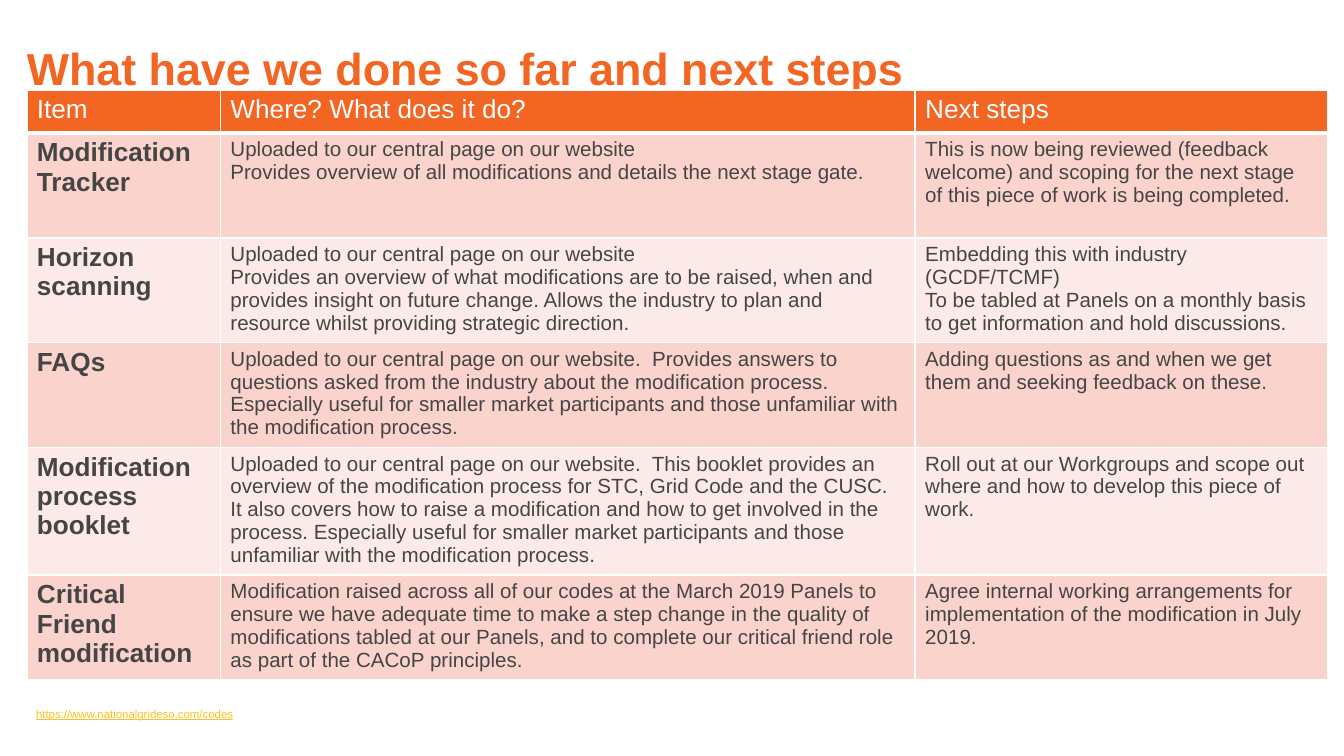
from lxml.etree import SubElement
from pptx import Presentation
from pptx.dml.color import RGBColor
from pptx.enum.text import MSO_ANCHOR, MSO_AUTO_SIZE, PP_ALIGN
from pptx.oxml.ns import qn
from pptx.util import Inches, Pt

ORANGE = RGBColor(0xF2, 0x65, 0x22)
PINK = RGBColor(0xFA, 0xD3, 0xCD)
PALE_PINK = RGBColor(0xFC, 0xEA, 0xE8)
GREY = RGBColor(0x45, 0x45, 0x45)
AMBER = RGBColor(0xFF, 0xBF, 0x22)
WHITE = RGBColor(0xFF, 0xFF, 0xFF)

GRID_STEP = 0.1
SLIDE_COLUMNS, SLIDE_ROWS = 100, 56.25
COLUMN_WIDTHS = [14.4, 51.7, 30.7]
ROW_HEIGHTS = [3.2, 7.8, 7.8, 7.8, 9.5, 7.8]

HEADINGS = ["Item", "Where? What does it do?", "Next steps"]
ITEMS = [
    ["Modification Tracker",
     "Uploaded to our central page on our website\n"
     "Provides overview of all modifications and details the next stage gate.",
     "This is now being reviewed (feedback welcome) and scoping for the next stage "
     "of this piece of work is being completed."],
    ["Horizon scanning",
     "Uploaded to our central page on our website\n"
     "Provides an overview of what modifications are to be raised, when and provides "
     "insight on future change. Allows the industry to plan and resource whilst "
     "providing strategic direction.",
     "Embedding this with industry (GCDF/TCMF)\n"
     "To be tabled at Panels on a monthly basis to get information and hold discussions."],
    ["FAQs",
     "Uploaded to our central page on our website.  Provides answers to questions asked "
     "from the industry about the modification process. Especially useful for smaller "
     "market participants and those unfamiliar with the modification process.",
     "Adding questions as and when we get them and seeking feedback on these."],
    ["Modification process booklet",
     "Uploaded to our central page on our website.  This booklet provides an overview of "
     "the modification process for STC, Grid Code and the CUSC.  It also covers how to "
     "raise a modification and how to get involved in the process. Especially useful for "
     "smaller market participants and those unfamiliar with the modification process.",
     "Roll out at our Workgroups and scope out where and how to develop this piece of work."],
    ["Critical Friend modification",
     "Modification raised across all of our codes at the March 2019 Panels to ensure we "
     "have adequate time to make a step change in the quality of modifications tabled at "
     "our Panels, and to complete our critical friend role as part of the CACoP principles.",
     "Agree internal working arrangements for implementation of the modification in July 2019."],
]


def grid(steps):
    return Inches(steps * GRID_STEP)


def format_runs(text_frame, size, color, bold=False, underline=False):
    for paragraph in text_frame.paragraphs:
        for run in paragraph.runs:
            font = run.font
            font.name = "Arial"
            font.size = Pt(size)
            font.bold = bold
            font.underline = underline
            font.color.rgb = color


def add_title(slide, text):
    title = slide.shapes.title
    title.left, title.top = grid(2), grid(0.6)
    title.width, title.height = grid(68), grid(6.4)
    text_frame = title.text_frame
    text_frame.text = text
    text_frame.auto_size = MSO_AUTO_SIZE.NONE
    text_frame.vertical_anchor = MSO_ANCHOR.BOTTOM
    text_frame.margin_left = text_frame.margin_right = 0
    text_frame.margin_top = text_frame.margin_bottom = 0
    paragraph = text_frame.paragraphs[0]
    paragraph.alignment = PP_ALIGN.LEFT
    paragraph.line_spacing = 0.8
    format_runs(text_frame, 24, ORANGE, bold=True)


def set_borders(cell, bottom):
    properties = cell._tc.get_or_add_tcPr()
    for side, width in (("L", 1), ("R", 1), ("T", 1), ("B", bottom)):
        line = SubElement(properties, qn(f"a:ln{side}"), w=str(Pt(width)))
        fill = SubElement(line, qn("a:solidFill"))
        SubElement(fill, qn("a:srgbClr"), val=str(WHITE))


def fill_cell(cell, text, fill_color, size, text_color, bold=False, bottom=1):
    set_borders(cell, bottom)
    cell.fill.solid()
    cell.fill.fore_color.rgb = fill_color
    cell.margin_left = cell.margin_right = Pt(5.4)
    cell.margin_top = cell.margin_bottom = Pt(2.7)
    cell.text_frame.text = text
    format_runs(cell.text_frame, size, text_color, bold)


def add_items_table(slide):
    frame = slide.shapes.add_table(
        len(ROW_HEIGHTS), len(COLUMN_WIDTHS), grid(2), grid(6.7),
        grid(sum(COLUMN_WIDTHS)), grid(sum(ROW_HEIGHTS)))
    table = frame.table
    table.horz_banding = False
    for column, width in zip(table.columns, COLUMN_WIDTHS):
        column.width = grid(width)
    for row, height in zip(table.rows, ROW_HEIGHTS):
        row.height = grid(height)
    for column_index, heading in enumerate(HEADINGS):
        fill_cell(table.cell(0, column_index), heading, ORANGE, 14, WHITE, bottom=3)
    for row_index, item in enumerate(ITEMS, start=1):
        fill_color = PINK if row_index % 2 else PALE_PINK
        for column_index, text in enumerate(item):
            is_name = column_index == 0
            fill_cell(table.cell(row_index, column_index), text, fill_color,
                      14 if is_name else 11, GREY, is_name)


def add_web_address(slide, address):
    text_box = slide.shapes.add_textbox(grid(1.7), grid(52.1), grid(16.9), grid(2))
    text_frame = text_box.text_frame
    text_frame.word_wrap = False
    text_frame.auto_size = MSO_AUTO_SIZE.SHAPE_TO_FIT_TEXT
    text_frame.text = address
    format_runs(text_frame, 6.1, AMBER, underline=True)


def main():
    presentation = Presentation()
    presentation.slide_width = grid(SLIDE_COLUMNS)
    presentation.slide_height = grid(SLIDE_ROWS)
    slide = presentation.slides.add_slide(presentation.slide_layouts[5])
    add_title(slide, "What have we done so far and next steps")
    add_items_table(slide)
    add_web_address(slide, "https://www.nationalgrideso.com/codes")
    presentation.save("out.pptx")


if __name__ == "__main__":
    main()
